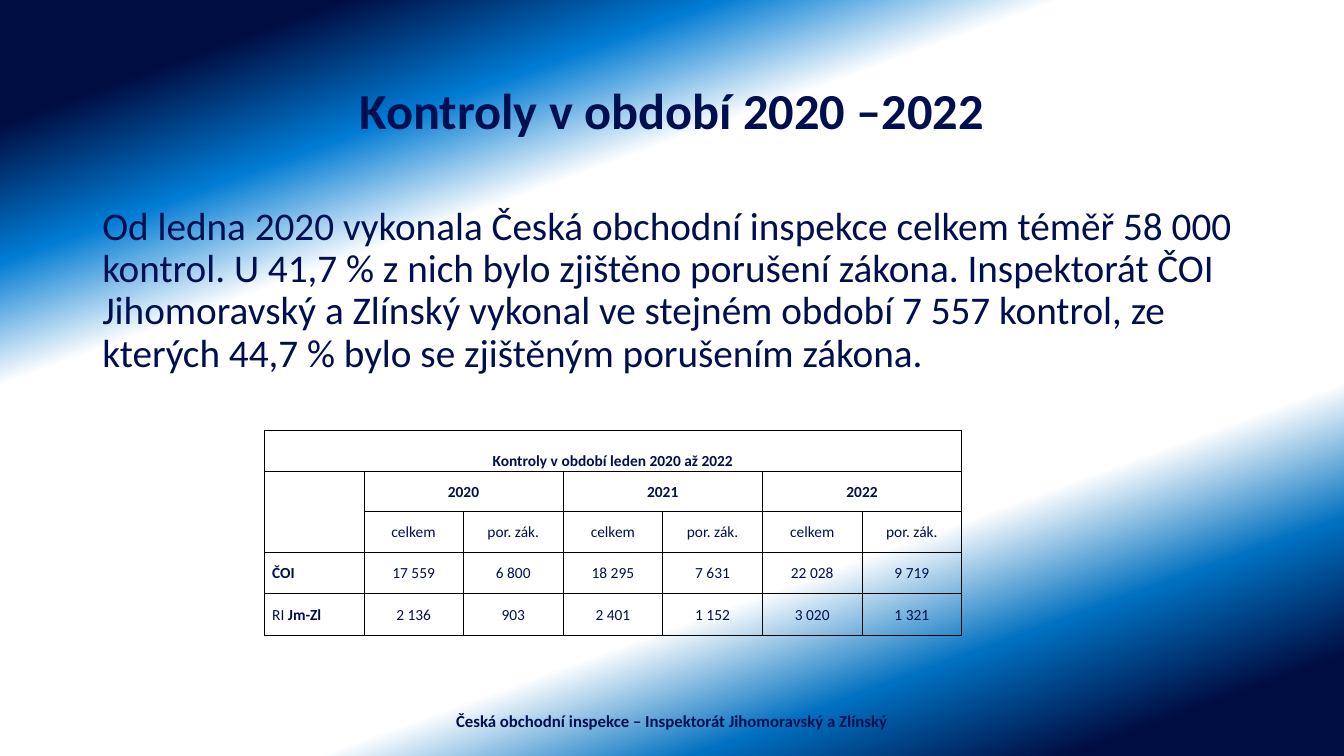
from lxml import etree
from pptx import Presentation
from pptx.dml.color import RGBColor
from pptx.enum import text as tx
from pptx.oxml import ns
from pptx.util import Pt

NAVY = RGBColor(0x00, 0x0F, 0x50)
BLACK = RGBColor(0x00, 0x00, 0x00)
DARK = RGBColor(0x00, 0x0D, 0x42)
BRIGHT = RGBColor(0x00, 0x7B, 0xD3)
BLUE = RGBColor(0x00, 0x70, 0xC0)
WHITE = RGBColor(0xFF, 0xFF, 0xFF)
LEFT, CENTER = tx.PP_ALIGN.LEFT, tx.PP_ALIGN.CENTER
TOP, MIDDLE, BOTTOM = tx.MSO_ANCHOR.TOP, tx.MSO_ANCHOR.MIDDLE, tx.MSO_ANCHOR.BOTTOM


def sub(parent, tag, **attrs):
    return etree.SubElement(parent, ns.qn(tag), attrs)


def write(par, words, size, bold=False, align=CENTER):
    par.alignment = align
    run = par.add_run()
    run.text = words
    run.font.name = "Calibri"
    run.font.size = Pt(size)
    run.font.bold = bold
    run.font.color.rgb = NAVY


prs = Presentation()
prs.slide_width, prs.slide_height = Pt(960), Pt(540)
slide = prs.slides.add_slide(prs.slide_layouts[6])

# Background gradient
fill = slide.background.fill
fill.gradient()
fill.gradient_angle = 290
stops = slide.element.find(".//" + ns.qn("a:gsLst"))
for stop in list(stops):
    stops.remove(stop)
for place, color, alpha in [(10, DARK, 100), (21, BRIGHT, 93), (31, WHITE, 100),
                            (70, WHITE, 100), (81, BLUE, 100), (92, DARK, 100)]:
    stop = sub(stops, "a:gs", pos=str(place * 1000))
    tint = sub(stop, "a:srgbClr", val=str(color))
    if alpha < 100:
        sub(tint, "a:alpha", val=str(alpha * 1000))

# Title, body and footer
body = ("Od ledna 2020 vykonala Česká obchodní inspekce celkem téměř 58 000 kontrol. "
        "U 41,7 % z nich bylo zjištěno porušení zákona. Inspektorát ČOI Jihomoravský "
        "a Zlínský vykonal ve stejném období 7 557 kontrol, ze kterých 44,7 % bylo "
        "se zjištěným porušením zákona.")
footer = "Česká obchodní inspekce – Inspektorát Jihomoravský a Zlínský"
for area, words, size, bold, align, anchor, lead, gap in [
    ((66, 28.75, 828, 104.4), "Kontroly v období 2020 –2022", 36, True, CENTER, MIDDLE, 0.9, 0),
    ((66, 143.75, 828, 342.6), body, 28, False, LEFT, TOP, 0.9, 10),
    ((318, 500.5, 324, 28.75), footer, 12, True, CENTER, MIDDLE, 1.0, 0),
]:
    box = slide.shapes.add_textbox(*[Pt(side) for side in area])
    frame = box.text_frame
    frame.word_wrap = True
    frame.vertical_anchor = anchor
    par = frame.paragraphs[0]
    par.line_spacing = lead
    par.space_before = Pt(gap)
    write(par, words, size, bold, align)

# Table of inspections
heads = ["celkem", "por. zák."] * 3
rows = [
    ["Kontroly v období leden 2020 až 2022"] + [""] * 6,
    ["", "2020", "", "2021", "", "2022", ""],
    [""] + heads,
    ["ČOI", "17 559", "6 800", "18 295", "7 631", "22 028", "9 719"],
    ["RI Jm-Zl", "2 136", "903", "2 401", "1 152", "3 020", "1 321"],
]
grid = slide.shapes.add_table(5, 7, Pt(188.7), Pt(307.4), Pt(498.4), Pt(146.9)).table
grid.first_row = grid.horz_banding = False
for col in grid.columns:
    col.width = Pt(71.2)
for r, row in enumerate(grid.rows):
    row.height = Pt(30.5 if r == 4 else 29.1)

grid.cell(0, 0).merge(grid.cell(0, 6))
grid.cell(1, 0).merge(grid.cell(2, 0))
for c in (1, 3, 5):
    grid.cell(1, c).merge(grid.cell(1, c + 1))

for r, row in enumerate(rows):
    for c, words in enumerate(row):
        cell = grid.cell(r, c)
        label = c == 0 and r > 2
        cell.margin_left = Pt(5.7 if label else 0.7)
        cell.margin_right = cell.margin_top = Pt(0.7)
        cell.margin_bottom = Pt(0)
        cell.vertical_anchor = BOTTOM if r == 0 else MIDDLE
        par = cell.text_frame.paragraphs[0]
        if label:
            lead, name = ("RI ", "Jm-Zl") if words.startswith("RI ") else ("", words)
            if lead:
                write(par, lead, 11, False, LEFT)
            write(par, name, 11, True, LEFT)
        elif words:
            write(par, words, 11, r < 2)

        last = c + (cell.span_width if cell.is_merge_origin else 1) == 7
        props = cell._tc.get_or_add_tcPr()
        for tag, outer in [("a:lnL", c == 0), ("a:lnR", last),
                           ("a:lnT", r == 0), ("a:lnB", r == 4)]:
            line = sub(props, tag, w=str(Pt(1 if outer else 0.5)))
            sub(sub(line, "a:solidFill"), "a:srgbClr", val=str(BLACK))
        cell.fill.background()

prs.save("out.pptx")
